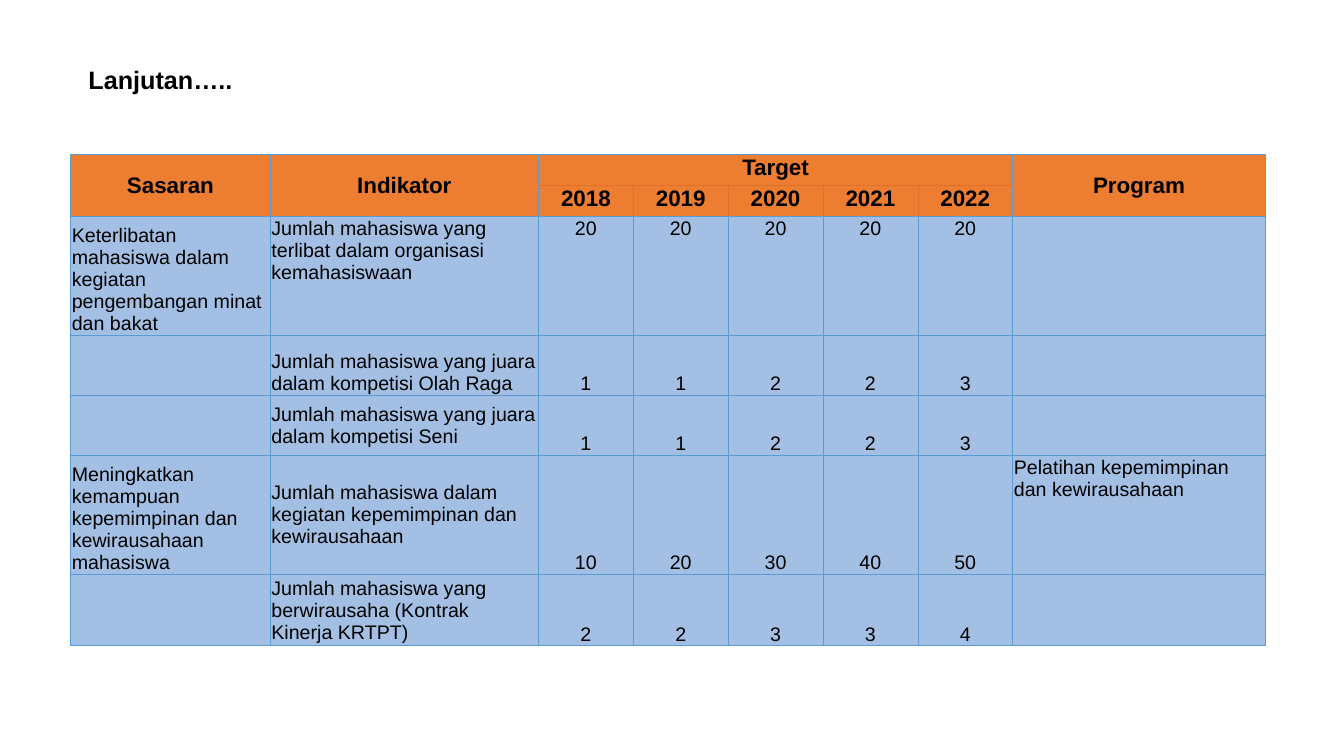
"""Build the continuation slide with the table of student targets."""
from dataclasses import dataclass

from lxml import etree
from pptx import Presentation
from pptx.dml.color import RGBColor
from pptx.enum import text
from pptx.oxml.ns import qn
from pptx.util import Cm, Pt

TOP, MID, LOW = text.MSO_ANCHOR.TOP, text.MSO_ANCHOR.MIDDLE, text.MSO_ANCHOR.BOTTOM
LEFT, MEAN = text.PP_ALIGN.LEFT, text.PP_ALIGN.CENTER


@dataclass(frozen=True)
class Theme:
    """Colours, font and type sizes."""
    font: str = "Arial"
    ink: str = "000000"
    head: str = "ED7D31"
    body: str = "A3C0E4"
    line: str = "5B9BD5"
    seam: str = "E0712A"
    title: int = 18
    label: int = 16
    plain: int = 14


@dataclass(frozen=True)
class Goal:
    """One body row: goal, indicator, yearly targets, programme, anchors."""
    aim: str
    mark: str
    nums: tuple[int, ...]
    plan: str
    tall: float
    hold: text.MSO_ANCHOR
    base: text.MSO_ANCHOR = LOW


LOOK = Theme()
YEARS = range(2018, 2023)
WIDE = (5.03, 6.76, *[2.39] * len(YEARS), 6.37)
HEAD = 0.78
LAST = len(WIDE) - 1
GOALS = (
    Goal("Keterlibatan mahasiswa dalam kegiatan pengembangan minat dan bakat",
         "Jumlah mahasiswa yang terlibat dalam organisasi kemahasiswaan",
         (20, 20, 20, 20, 20), "", 2.8, TOP, TOP),
    Goal("", "Jumlah mahasiswa yang juara dalam kompetisi Olah Raga",
         (1, 1, 2, 2, 3), "", 1.51, LOW),
    Goal("", "Jumlah mahasiswa yang juara dalam kompetisi Seni",
         (1, 1, 2, 2, 3), "", 1.51, MID),
    Goal("Meningkatkan kemampuan kepemimpinan dan kewirausahaan mahasiswa",
         "Jumlah mahasiswa dalam kegiatan kepemimpinan dan kewirausahaan",
         (10, 20, 30, 40, 50), "Pelatihan kepemimpinan dan kewirausahaan", 2.8, MID),
    Goal("", "Jumlah mahasiswa yang\vberwirausaha (Kontrak\vKinerja KRTPT)",
         (2, 2, 3, 3, 4), "", 1.71, MID),
)


def style(para, size: int, bold: bool, align: text.PP_ALIGN) -> None:
    """Set the font and alignment of a paragraph."""
    para.alignment = align
    font = para.font
    font.name, font.size, font.bold = LOOK.font, Pt(size), bold
    font.color.rgb = RGBColor.from_string(LOOK.ink)


def rim(cell, row: int, col: int) -> None:
    """Draw the four borders of a cell, with seams inside the target heading."""
    years = row < 2 and 2 <= col < LAST
    seams = {"L": col > 2, "R": col < LAST - 1, "T": row == 1, "B": row == 0}
    props = cell._tc.get_or_add_tcPr()
    for spot, (side, seam) in enumerate(seams.items()):
        line = etree.Element(qn(f"a:ln{side}"), w=str(Pt(0.5)))
        fill = etree.SubElement(line, qn("a:solidFill"))
        tone = LOOK.seam if years and seam else LOOK.line
        etree.SubElement(fill, qn("a:srgbClr"), val=tone)
        props.insert(spot, line)


def put(cell, words: str, head: bool, align: text.PP_ALIGN, hold: text.MSO_ANCHOR) -> None:
    """Write the words of a cell and set its look."""
    cell.margin_left = cell.margin_right = cell.margin_top = Cm(0.03)
    cell.margin_bottom = Cm(0)
    cell.vertical_anchor = hold
    cell.fill.solid()
    cell.fill.fore_color.rgb = RGBColor.from_string(LOOK.head if head else LOOK.body)
    cell.text = words
    for para in cell.text_frame.paragraphs:
        style(para, LOOK.label if head else LOOK.plain, head, align)


def draw(slide) -> None:
    """Add the table of targets."""
    tall = (HEAD, HEAD, *[goal.tall for goal in GOALS])
    frame = slide.shapes.add_table(len(tall), len(WIDE), Cm(1.78), Cm(3.89),
                                   Cm(sum(WIDE)), Cm(sum(tall)))
    table = frame.table
    for col, size in zip(table.columns, WIDE):
        col.width = Cm(size)
    for row, size in zip(table.rows, tall):
        row.height = Cm(size)
    tops = ("Sasaran", "Indikator", "Target", *[""] * (len(YEARS) - 1), "Program")
    subs = ("", "", *map(str, YEARS), "")
    for row, names in enumerate((tops, subs)):
        for col, name in enumerate(names):
            hold = TOP if 2 <= col < LAST else MID
            put(table.cell(row, col), name, True, MEAN, hold)
    for row, goal in enumerate(GOALS, 2):
        put(table.cell(row, 0), goal.aim, False, LEFT, LOW)
        put(table.cell(row, 1), goal.mark, False, LEFT, goal.hold)
        for col, num in enumerate(goal.nums, 2):
            put(table.cell(row, col), str(num), False, MEAN, goal.base)
        put(table.cell(row, LAST), goal.plan, False, LEFT, TOP)
    for row in range(len(tall)):
        for col in range(len(WIDE)):
            rim(table.cell(row, col), row, col)
    for col in (0, 1, LAST):
        table.cell(0, col).merge(table.cell(1, col))
    table.cell(0, 2).merge(table.cell(0, LAST - 1))


def title(slide, words: str) -> None:
    """Add the slide title."""
    box = slide.shapes.add_textbox(Cm(1.98), Cm(1.42), Cm(29.21), Cm(1.27))
    frame = box.text_frame
    frame.word_wrap = True
    frame.vertical_anchor = MID
    frame.text = words
    para = frame.paragraphs[0]
    para.line_spacing = 0.9
    style(para, LOOK.title, True, LEFT)


def main() -> None:
    """Build and save the deck."""
    deck = Presentation()
    deck.slide_width, deck.slide_height = Cm(33.87), Cm(19.05)
    slide = deck.slides.add_slide(deck.slide_layouts[6])
    title(slide, "Lanjutan…..")
    draw(slide)
    deck.save("out.pptx")


if __name__ == "__main__":
    main()
